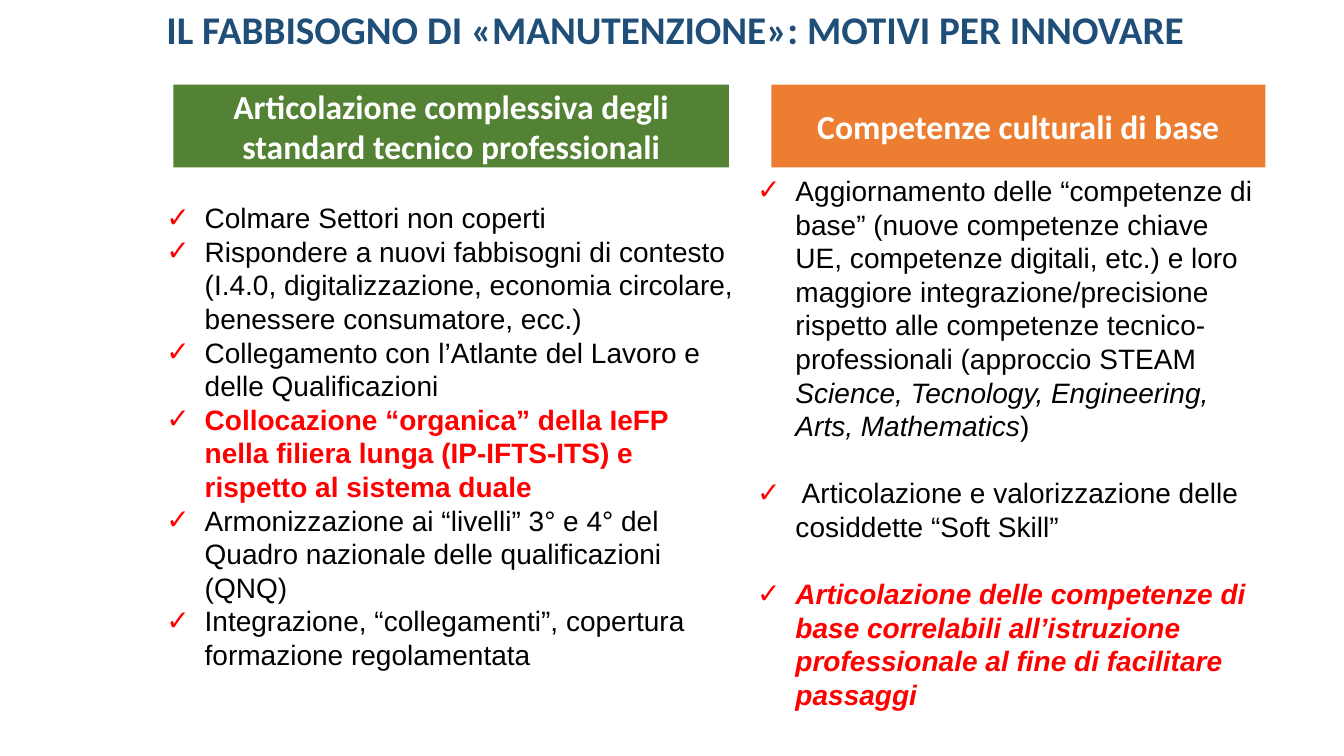
from dataclasses import dataclass

from lxml import etree
from pptx import Presentation
from pptx.dml.color import RGBColor
from pptx.enum.shapes import MSO_SHAPE
from pptx.enum.text import MSO_ANCHOR, MSO_AUTO_SIZE, PP_ALIGN
from pptx.oxml.ns import qn
from pptx.util import Inches, Pt

RECT = MSO_SHAPE.RECTANGLE
TOP, MIDDLE = MSO_ANCHOR.TOP, MSO_ANCHOR.MIDDLE
LEFT, CENTER = PP_ALIGN.LEFT, PP_ALIGN.CENTER
FIXED = MSO_AUTO_SIZE.NONE


@dataclass(frozen=True)
class Theme:
    navy: str = "1F4E79"
    green: str = "548235"
    orange: str = "ED7D31"
    red: str = "FF0000"
    black: str = "000000"
    white: str = "FFFFFF"
    head: str = "Calibri"
    body: str = "Arial"
    title: int = 28
    label: int = 24
    text: int = 20
    pitch: int = 24
    indent: float = 0.38


THEME = Theme()
WIDE, HIGH = 13.33, 7.5

SKILLS = [
    [("Colmare Settori non coperti", {})],
    [("Rispondere a nuovi fabbisogni di contesto (I.4.0, digitalizzazione, "
      "economia circolare, benessere consumatore, ecc.)", {})],
    [("Collegamento con l’Atlante del Lavoro e delle Qualificazioni", {})],
    [("Collocazione “organica” della IeFP nella filiera lunga (IP-IFTS-ITS) "
      "e rispetto al sistema duale", {"color": THEME.red, "bold": True})],
    [("Armonizzazione ai “livelli” 3° e 4° del Quadro nazionale delle "
      "qualificazioni (QNQ)", {})],
    [("Integrazione, “collegamenti”, copertura formazione regolamentata", {})],
]
CULTURE = [
    [("Aggiornamento delle “competenze di base” (nuove competenze chiave UE, "
      "competenze digitali, etc.) e loro maggiore integrazione/precisione "
      "rispetto alle competenze tecnico-professionali (approccio STEAM ", {}),
     ("Science, Tecnology, Engineering, Arts, Mathematics", {"italic": True}),
     (")", {})],
    [(" Articolazione e valorizzazione delle cosiddette “Soft Skill”", {})],
    [("Articolazione delle competenze di base correlabili all’istruzione "
      "professionale al fine di facilitare passaggi",
      {"color": THEME.red, "bold": True, "italic": True})],
]


def place(shape, box):
    shape.left, shape.top, shape.width, shape.height = map(Inches, box)


def frame(shape, anchor):
    area = shape.text_frame
    area.word_wrap = True
    area.auto_size = FIXED
    area.vertical_anchor = anchor
    return area


def write(para, text, font=THEME.body, size=THEME.text, color=THEME.black,
          bold=False, italic=False, align=LEFT):
    para.alignment = align
    run = para.add_run()
    run.text = text
    run.font.name = font
    run.font.size = Pt(size)
    run.font.color.rgb = RGBColor.from_string(color)
    run.font.bold = bold
    run.font.italic = italic


def tick(para):
    props = para._p.get_or_add_pPr()
    props.set("marL", str(Inches(THEME.indent)))
    props.set("indent", str(-Inches(THEME.indent)))
    shade = etree.SubElement(props, qn("a:buClr"))
    etree.SubElement(shade, qn("a:srgbClr"), val=THEME.red)
    etree.SubElement(props, qn("a:buFont"), typeface=THEME.body)
    etree.SubElement(props, qn("a:buChar"), char="✓")


def banner(slide, box, text):
    shape = slide.shapes.title
    place(shape, box)
    write(frame(shape, TOP).paragraphs[0], text, font=THEME.head,
          size=THEME.title, color=THEME.navy, bold=True)


def label(slide, box, text, fill):
    shape = slide.shapes.add_shape(RECT, *map(Inches, box))
    shape.shadow.inherit = False
    shape.fill.solid()
    shape.fill.fore_color.rgb = RGBColor.from_string(fill)
    shape.line.fill.background()
    write(frame(shape, MIDDLE).paragraphs[0], text, font=THEME.head,
          size=THEME.label, color=THEME.white, bold=True, align=CENTER)


def points(holder, box, items, gap):
    place(holder, box)
    area = frame(holder, TOP)
    for row, item in enumerate(items):
        para = area.add_paragraph() if row else area.paragraphs[0]
        para.line_spacing = Pt(THEME.pitch)
        para.space_before = Pt(gap if row else 0)
        para.space_after = Pt(0)
        for text, style in item:
            write(para, text, **style)
        tick(para)


def column(slide, holder, box, text, fill, items, inset, trim, drop, gap=0):
    left, top, width, height = box
    tall = 0.82
    label(slide, (left + inset, top, width - inset - trim, tall), text, fill)
    start = tall + drop
    points(holder, (left, top + start, width, height - start), items, gap)


def main():
    deck = Presentation()
    deck.slide_width, deck.slide_height = Inches(WIDE), Inches(HIGH)
    slide = deck.slides.add_slide(deck.slide_layouts[3])
    first, second = list(slide.placeholders)[1:]
    edge, split, top = 1.55, 7.41, 0.84
    banner(slide, (edge, 0, WIDE - edge, 0.57),
           "IL FABBISOGNO DI «MANUTENZIONE»: MOTIVI PER INNOVARE")
    column(slide, first, (edge, top, 5.85, 5.91),
           "Articolazione complessiva degli standard tecnico professionali",
           THEME.green, SKILLS, inset=0.17, trim=0.17, drop=0.28)
    column(slide, second, (split, top, 5.15, 6.65),
           "Competenze culturali di base", THEME.orange, CULTURE,
           inset=0.24, trim=0.01, drop=0.01, gap=THEME.pitch)
    deck.save("out.pptx")


if __name__ == "__main__":
    main()
